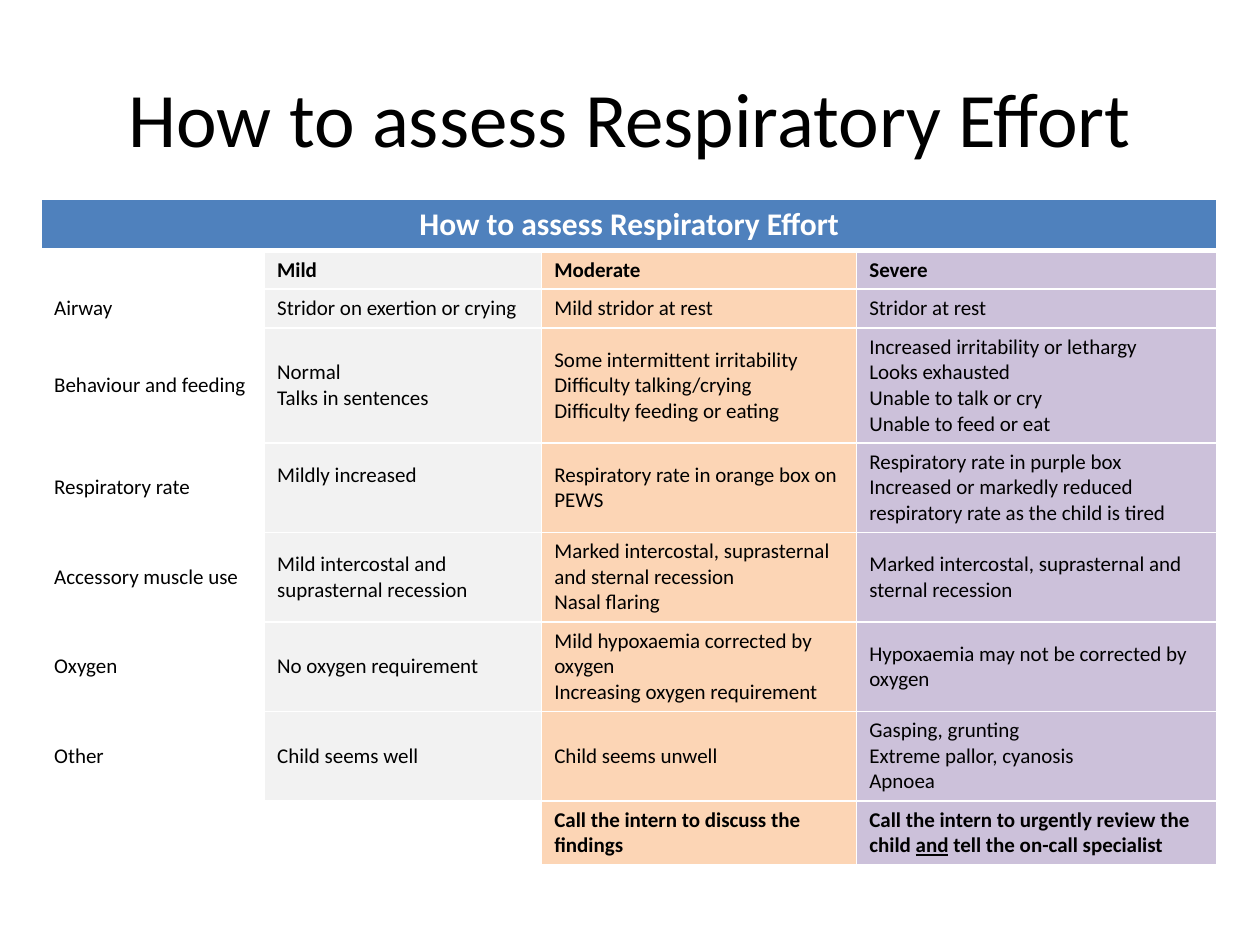
"""Build a slide with a table for assessing respiratory effort in children."""
from dataclasses import dataclass

from lxml import etree
from pptx import Presentation
from pptx.dml.color import RGBColor
from pptx.enum import text
from pptx.oxml import ns
from pptx.util import Inches, Pt

COLORS = {"black": "000000", "white": "FFFFFF", "header": "4F81BD",
          "mild": "F2F2F2", "moderate": "FCD5B5", "severe": "CCC1DA"}
FONT = "Calibri"
HEADING = "How to assess Respiratory Effort"
COLUMN_WIDTHS = (1.77, 2.2, 2.5, 2.86)
COLUMN_FILLS = (None, "mild", "moderate", "severe")
HEADER_HEIGHT = 0.41
SIDES = ("L", "R", "T", "B")


@dataclass
class Criterion:
    """One row of the table: its height and the four cell texts."""
    height: float
    texts: tuple
    bold: bool = False


CRITERIA = [
    Criterion(0.3, ("", "Mild", "Moderate", "Severe"), True),
    Criterion(0.31, ("Airway", "Stridor on exertion or crying",
                     "Mild stridor at rest", "Stridor at rest")),
    Criterion(0.91, ("Behaviour and feeding", "Normal\nTalks in sentences",
                     "Some intermittent irritability\nDifficulty talking/crying\n"
                     "Difficulty feeding or eating",
                     "Increased irritability or lethargy\nLooks exhausted\n"
                     "Unable to talk or cry\nUnable to feed or eat")),
    Criterion(0.71, ("Respiratory rate", "Mildly increased",
                     "Respiratory rate in orange box on PEWS",
                     "Respiratory rate in purple box\nIncreased or markedly reduced "
                     "respiratory rate as the child is tired")),
    Criterion(0.71, ("Accessory muscle use",
                     "Mild intercostal and suprasternal recession",
                     "Marked intercostal, suprasternal and sternal recession\nNasal flaring",
                     "Marked intercostal, suprasternal and sternal recession")),
    Criterion(0.71, ("Oxygen", "No oxygen requirement",
                     "Mild hypoxaemia corrected by oxygen\nIncreasing oxygen requirement",
                     "Hypoxaemia may not be corrected by oxygen")),
    Criterion(0.71, ("Other", "Child seems well", "Child seems unwell",
                     "Gasping, grunting\nExtreme pallor, cyanosis\nApnoea")),
    Criterion(0.51, ("", "", "Call the intern to discuss the findings",
                     "Call the intern to urgently review the child _and_"
                     " tell the on-call specialist"), True),
]


def rgb(name: str) -> RGBColor:
    """Look up a named colour."""
    return RGBColor.from_string(COLORS[name])


def write(frame, content: str, size: int, color: str = "black",
          bold: bool = False, align=None) -> None:
    """Write one paragraph per line, underlining what stands between underscores."""
    for index, line in enumerate(content.split("\n")):
        paragraph = frame.add_paragraph() if index else frame.paragraphs[0]
        paragraph.alignment = align
        if not line:
            paragraph._p.get_or_add_endParaRPr().set("sz", str(size * 100))
            continue
        for part, words in enumerate(line.split("_")):
            run = paragraph.add_run()
            run.text = words
            font_format = {"name": FONT, "size": Pt(size), "bold": bold,
                           "underline": part % 2 == 1}
            for attribute, value in font_format.items():
                setattr(run.font, attribute, value)
            run.font.color.rgb = rgb(color)


def style_cell(cell, fill: str | None, thick_side: str = "") -> None:
    """Give a cell white borders and its fill."""
    properties = cell._tc.get_or_add_tcPr()
    for side in SIDES:
        width = Pt(3 if side == thick_side else 1)
        border = etree.SubElement(properties, ns.qn(f"a:ln{side}"), w=str(width))
        solid = etree.SubElement(border, ns.qn("a:solidFill"))
        etree.SubElement(solid, ns.qn("a:srgbClr"), val=COLORS["white"])
    if fill:
        cell.fill.solid()
        cell.fill.fore_color.rgb = rgb(fill)
    else:
        cell.fill.background()


def add_assessment(slide) -> None:
    """Add the table of criteria by severity."""
    heights = [HEADER_HEIGHT] + [criterion.height for criterion in CRITERIA]
    table = slide.shapes.add_table(
        len(heights), len(COLUMN_WIDTHS), Inches(0.33), Inches(1.58),
        Inches(sum(COLUMN_WIDTHS)), Inches(sum(heights))).table
    table.first_row = table.horz_banding = False
    for column, width in zip(table.columns, COLUMN_WIDTHS):
        column.width = Inches(width)
    for row, height in zip(table.rows, heights):
        row.height = Inches(height)

    header = table.cell(0, 0)
    header.merge(table.cell(0, len(COLUMN_WIDTHS) - 1))
    for cell in table.rows[0].cells:
        style_cell(cell, "header", "B")
    write(header.text_frame, HEADING, 18, "white", True, text.PP_ALIGN.CENTER)

    for row_number, criterion in enumerate(CRITERIA, 1):
        for column_number, content in enumerate(criterion.texts):
            cell = table.cell(row_number, column_number)
            fill = COLUMN_FILLS[column_number] if content else None
            style_cell(cell, fill, "T" if row_number == 1 else "")
            cell.vertical_anchor = text.MSO_ANCHOR.MIDDLE
            write(cell.text_frame, content, 12, bold=criterion.bold)
            if content == "Mildly increased":
                cell.margin_bottom = Inches(0.25)


def main() -> None:
    """Build and save the slide."""
    deck = Presentation()
    deck.slide_width, deck.slide_height = Inches(10), Inches(7.5)
    slide = deck.slides.add_slide(deck.slide_layouts[5])
    title = slide.shapes.title
    place = {"left": 0.5, "top": 0.3, "width": 9, "height": 1.25}
    for attribute, value in place.items():
        setattr(title, attribute, Inches(value))
    title.text_frame.vertical_anchor = text.MSO_ANCHOR.MIDDLE
    write(title.text_frame, HEADING, 44, align=text.PP_ALIGN.CENTER)
    add_assessment(slide)
    deck.save("out.pptx")


if __name__ == "__main__":
    main()
